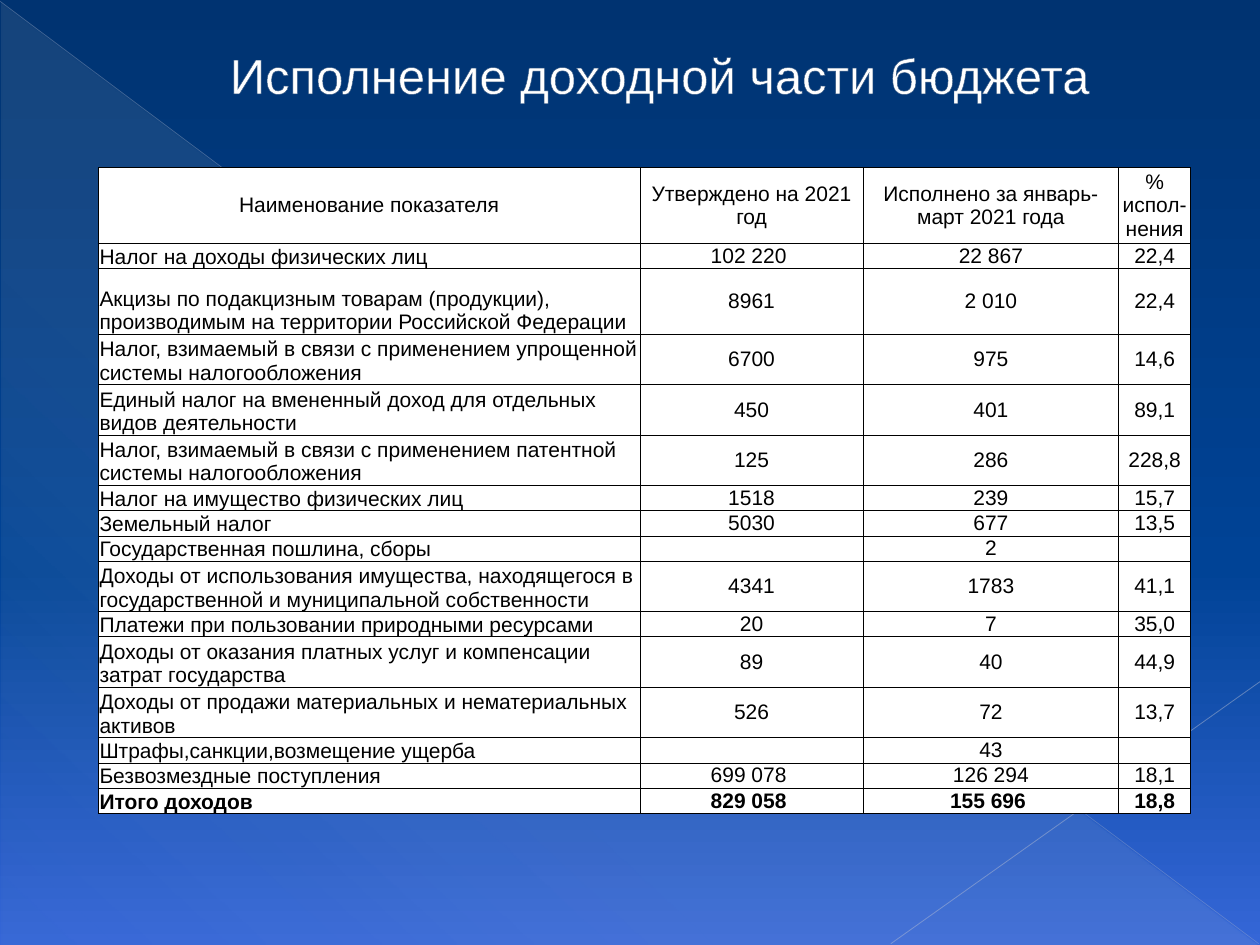
from dataclasses import dataclass

from lxml.etree import SubElement
from pptx import Presentation
from pptx.dml.color import RGBColor as RGB
from pptx.enum.shapes import MSO_CONNECTOR as CONN, MSO_SHAPE as SHAPE
from pptx.enum.text import MSO_ANCHOR as ANCHOR, PP_ALIGN as ALIGN
from pptx.oxml.ns import qn
from pptx.util import Inches, Pt


@dataclass(frozen=True)
class Theme:
    font: str = "Arial"
    title_size: int = 28
    table_size: int = 12
    text: str = "000000"
    paper: str = "FFFFFF"
    outline: str = "375983"
    border: str = "000000"
    background: tuple = (("003371", 0, 100), ("004396", 60, 100), ("3566D7", 100, 100))
    triangle: tuple = (("EEECE1", 0, 10), ("EEECE1", 70, 8), ("EEECE1", 100, 1))


T = Theme()


def add_color(parent, color, alpha=100):
    clr = SubElement(parent, qn("a:srgbClr"), val=color)
    if alpha < 100:
        SubElement(clr, qn("a:alpha"), val=str(alpha * 1000))


def set_gradient(fill, element, stops, angle):
    """Fill with (colour, position %, opacity %) stops at a clockwise angle."""
    fill.gradient()
    grad = element.find(".//" + qn("a:gradFill"))
    gs_list = grad.find(qn("a:gsLst"))
    for gs in list(gs_list):
        gs_list.remove(gs)
    for color, pos, alpha in stops:
        add_color(SubElement(gs_list, qn("a:gs"), pos=str(pos * 1000)), color, alpha)
    grad.find(qn("a:lin")).set("ang", str(angle * 60000))


prs = Presentation()
prs.slide_width, prs.slide_height = Inches(10), Inches(7.5)
s = prs.slides.add_slide(prs.slide_layouts[6])
set_gradient(s.background.fill, s._element, T.background, 90)

# Background triangle and diagonal lines
sp = s.shapes.add_shape(SHAPE.RIGHT_TRIANGLE, Inches(0.01), Inches(0.02), Inches(9.98), Inches(7.48))
sp.shadow.inherit = False
set_gradient(sp.fill, sp._element, T.triangle, 133)
sp.line.fill.background()

diagonals = [
    ((0, 0.01, 9.99, 7.49), "ADB6CE", 0.39, 35),
    ((10, 5.41, 7.07, 7.49), "B6BED3", 0.47, 45),
]
for ends, color, width, alpha in diagonals:
    ln = s.shapes.add_connector(CONN.STRAIGHT, *[Inches(v) for v in ends])
    ln.line.width = Pt(width)
    ln.line.color.rgb = RGB.from_string(color)
    clr = ln._element.spPr.find(".//" + qn("a:srgbClr"))
    SubElement(clr, qn("a:alpha"), val=str(alpha * 1000))
    SubElement(ln._element.spPr, qn("a:effectLst"))

# Title
title = s.shapes.add_textbox(Inches(0.47), Inches(0.23), Inches(9), Inches(0.72))
tf = title.text_frame
tf.word_wrap = True
tf.vertical_anchor = ANCHOR.MIDDLE
p = tf.paragraphs[0]
p.text = "Исполнение доходной части бюджета"
p.alignment = ALIGN.CENTER
p._p.get_or_add_pPr().set("marL", str(Inches(0.53)))
r = p.runs[0]
r.font.name, r.font.size = T.font, Pt(T.title_size)
r.font.color.rgb = RGB.from_string(T.paper)
outline = SubElement(r._r.rPr, qn("a:ln"), w=str(Pt(0.5)))
add_color(SubElement(outline, qn("a:solidFill")), T.outline)
r._r.rPr.insert(0, outline)

# Budget table: row height in points, then the four cells
ONE_LINE, TWO_LINES, THREE_LINES, EXCISE = 14, 27.5, 40.5, 37.5
budget = [
    (THREE_LINES, "Наименование показателя", "Утверждено на 2021 год",
     "Исполнено за январь-март 2021 года", "% испол-нения"),
    (ONE_LINE, "Налог на доходы физических лиц", "102 220 ", "22 867", "22,4"),
    (EXCISE, "Акцизы по подакцизным товарам (продукции), производимым на территории Российской Федерации",
     "8961", "2 010", "22,4"),
    (TWO_LINES, "Налог, взимаемый в связи с применением упрощенной системы налогообложения", "6700", "975", "14,6"),
    (TWO_LINES, "Единый налог на вмененный доход для отдельных видов деятельности", "450", "401", "89,1"),
    (TWO_LINES, "Налог, взимаемый в связи с применением патентной системы налогообложения", "125", "286", "228,8"),
    (ONE_LINE, "Налог на имущество физических лиц", "1518", "239", "15,7"),
    (ONE_LINE, "Земельный налог", "5030", "677", "13,5"),
    (ONE_LINE, "Государственная пошлина, сборы", "", "2", ""),
    (TWO_LINES, "Доходы от использования имущества, находящегося в государственной и муниципальной собственности",
     "4341", "1783", "41,1"),
    (ONE_LINE, "Платежи при пользовании природными ресурсами", "20", "7", "35,0"),
    (TWO_LINES, "Доходы от оказания платных услуг и компенсации затрат государства", "89", "40", "44,9"),
    (TWO_LINES, "Доходы от продажи материальных и нематериальных активов", "526", "72", "13,7"),
    (ONE_LINE, "Штрафы,санкции,возмещение ущерба", "", "43", ""),
    (ONE_LINE, "Безвозмездные поступления", "699 078 ", "126 294", "18,1"),
    (ONE_LINE, "Итого доходов", "829 058 ", "155 696 ", "18,8"),
]
col_widths = [4.3, 1.77, 2.03, 0.57]
total_row = len(budget) - 1

table = s.shapes.add_table(len(budget), len(col_widths), Inches(0.78), Inches(1.33),
                           Inches(sum(col_widths)), Pt(sum(row[0] for row in budget))).table
table.first_row = table.horz_banding = False
for col, width in zip(table.columns, col_widths):
    col.width = Inches(width)

for i, (height, *texts) in enumerate(budget):
    table.rows[i].height = Inches(height / 72)
    for j, text in enumerate(texts):
        cell = table.cell(i, j)
        is_label = j == 0 and i > 0
        cell.margin_left = cell.margin_right = Inches(0.01)
        cell.margin_top = cell.margin_bottom = 0
        cell.vertical_anchor = ANCHOR.BOTTOM if is_label else ANCHOR.MIDDLE
        p = cell.text_frame.paragraphs[0]
        p.alignment = ALIGN.LEFT if is_label else ALIGN.CENTER
        if text:
            p.text = text
            font = p.runs[0].font
            font.name, font.size = T.font, Pt(T.table_size)
            font.bold = i == total_row
            font.color.rgb = RGB.from_string(T.text)
        else:
            SubElement(p._p, qn("a:endParaRPr"), sz=str(T.table_size * 100))
        tcPr = cell._tc.get_or_add_tcPr()
        for side in ("lnL", "lnR", "lnT", "lnB"):
            edge = SubElement(tcPr, qn(f"a:{side}"), w=str(Pt(0.5)))
            add_color(SubElement(edge, qn("a:solidFill")), T.border)
        cell.fill.solid()
        cell.fill.fore_color.rgb = RGB.from_string(T.paper)

prs.save("out.pptx")
